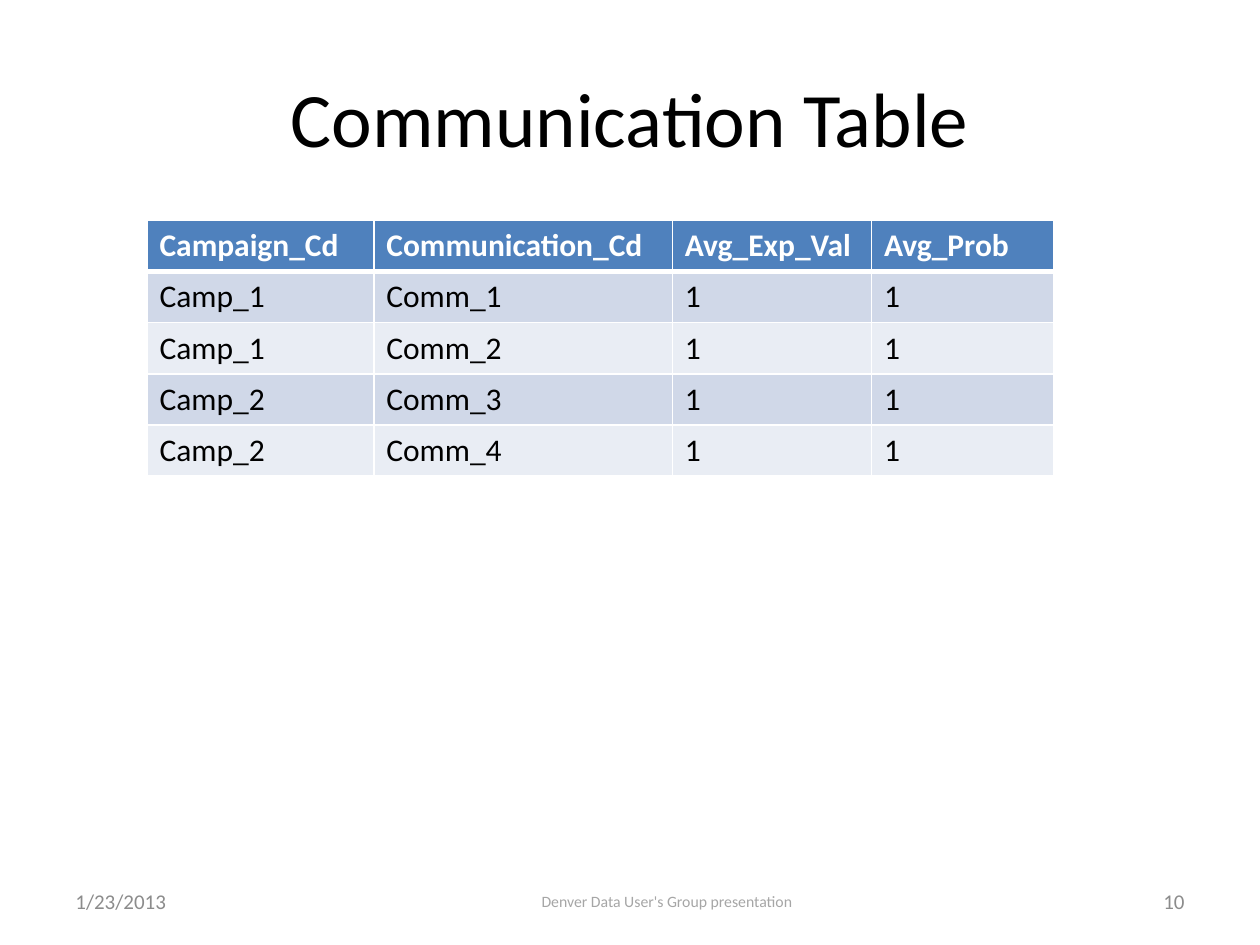
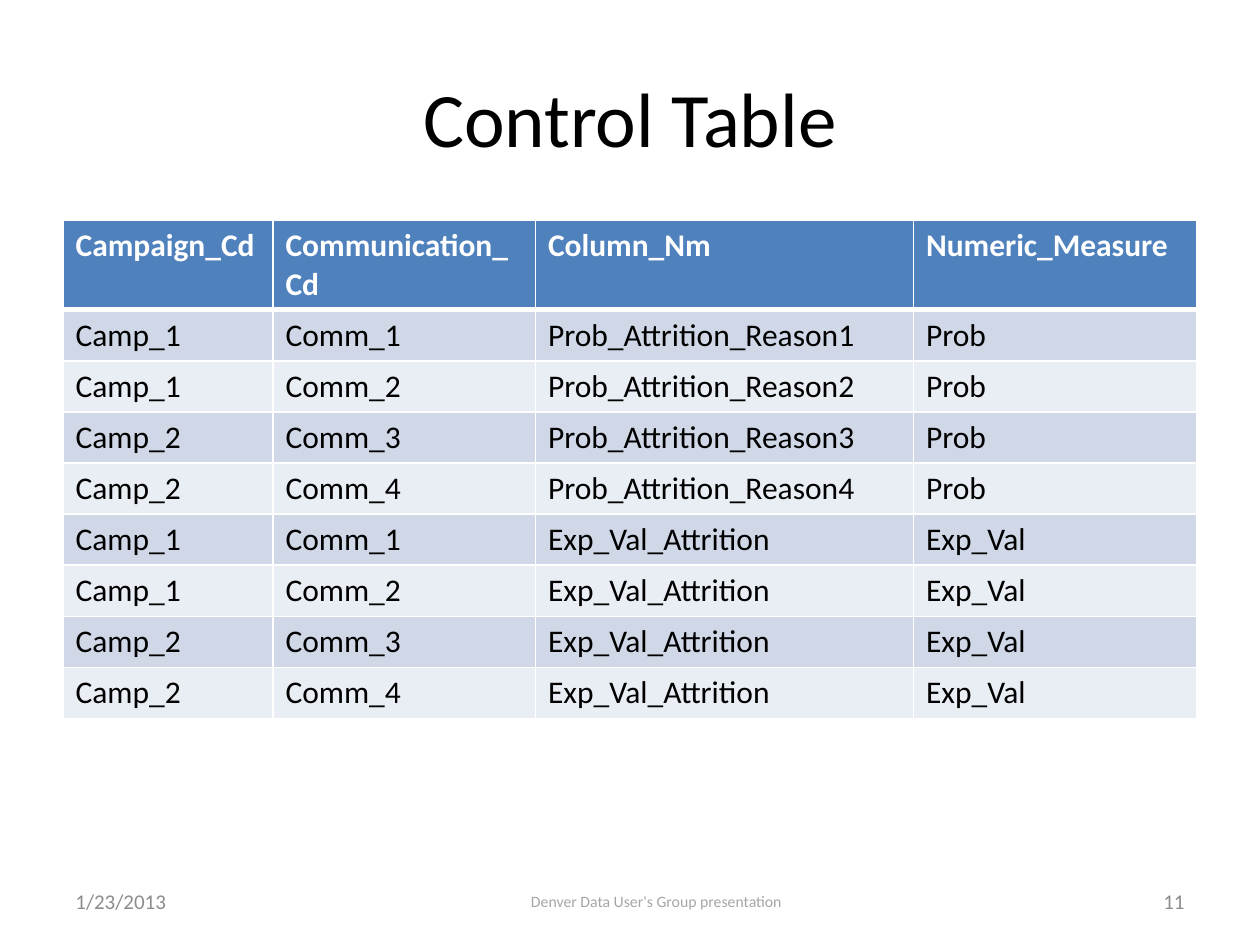
from lxml import etree
from pptx import Presentation
from pptx.dml.color import RGBColor
from pptx.enum.text import MSO_ANCHOR, PP_ALIGN
from pptx.oxml.ns import qn
from pptx.util import Pt

LEFT, CENTER, RIGHT = PP_ALIGN.LEFT, PP_ALIGN.CENTER, PP_ALIGN.RIGHT
MIDDLE = MSO_ANCHOR.MIDDLE

DATE = "1/23/2013"
EVENT = "Denver Data User's Group presentation"

COMMUNICATIONS = [
    ("Camp_1", "Comm_1"),
    ("Camp_1", "Comm_2"),
    ("Camp_2", "Comm_3"),
    ("Camp_2", "Comm_4"),
]

TABLE_SLIDES = [
    {
        "title": "Communication Table",
        "number": "10",
        "header": ("Campaign_Cd", "Communication_Cd", "Avg_Exp_Val", "Avg_Prob"),
        "rows": [pair + ("1", "1") for pair in COMMUNICATIONS],
        "table_left": 84,
        "column_widths": (129.6, 170.6, 113.8, 104.4),
        "header_height": 29.2,
        "event_left": 114,
    },
    {
        "title": "Control Table",
        "number": "11",
        "header": ("Campaign_Cd", "Communication_Cd", "Column_Nm", "Numeric_Measure"),
        "rows": [pair + (f"Prob_Attrition_Reason{reason}", "Prob")
                 for reason, pair in enumerate(COMMUNICATIONS, 1)]
              + [pair + ("Exp_Val_Attrition", "Exp_Val") for pair in COMMUNICATIONS],
        "table_left": 36,
        "column_widths": (120, 150, 216, 162),
        "header_height": 51,
        "event_left": 108,
    },
]

SLIDE_WIDTH, SLIDE_HEIGHT = 720, 540
MARGIN = 36
TABLE_TOP = 126
ROW_HEIGHT = 29.2
FOOTER_TOP, FOOTER_HEIGHT = 500.5, 28.75
SIDE_FOOTER_WIDTH, EVENT_WIDTH = 168, 534
THIN, THICK = 1, 3

FONT = "Calibri"
BLACK = RGBColor(0x00, 0x00, 0x00)
WHITE = RGBColor(0xFF, 0xFF, 0xFF)
HEADER_BLUE = RGBColor(0x4F, 0x81, 0xBD)
BANDS = (RGBColor(0xD0, 0xD8, 0xE8), RGBColor(0xE9, 0xED, 0xF4))
FOOTER_GREY = RGBColor(0x8C, 0x8C, 0x8C)
EVENT_GREY = RGBColor(0xA6, 0xA6, 0xA6)


def write(frame, text, size, color, align=LEFT, bold=False):
    paragraph = frame.paragraphs[0]
    paragraph.alignment = align
    run = paragraph.add_run()
    run.text = text
    run.font.name = FONT
    run.font.size = Pt(size)
    run.font.bold = bold
    run.font.color.rgb = color


def add_label(slide, text, box, size, color, align):
    frame = slide.shapes.add_textbox(*map(Pt, box)).text_frame
    frame.word_wrap = True
    frame.vertical_anchor = MIDDLE
    write(frame, text, size, color, align)


def set_borders(cell, top, bottom):
    """Draw white cell edges; must run before the fill is set."""
    properties = cell._tc.get_or_add_tcPr()
    for edge, width in (("lnL", THIN), ("lnR", THIN), ("lnT", top), ("lnB", bottom)):
        line = etree.SubElement(properties, qn(f"a:{edge}"), w=str(Pt(width)))
        fill = etree.SubElement(line, qn("a:solidFill"))
        etree.SubElement(fill, qn("a:srgbClr"), val=str(WHITE))


def add_banded_table(slide, content):
    lines = [content["header"], *content["rows"]]
    widths = content["column_widths"]
    heights = [content["header_height"]] + [ROW_HEIGHT] * len(content["rows"])
    table = slide.shapes.add_table(
        len(lines), len(widths), Pt(content["table_left"]), Pt(TABLE_TOP),
        Pt(sum(widths)), Pt(sum(heights))).table
    for column, width in zip(table.columns, widths):
        column.width = Pt(width)
    for row, height in zip(table.rows, heights):
        row.height = Pt(height)
    for r, line in enumerate(lines):
        is_header = r == 0
        for c, text in enumerate(line):
            cell = table.cell(r, c)
            set_borders(cell, THICK if r == 1 else THIN, THICK if is_header else THIN)
            cell.fill.solid()
            cell.fill.fore_color.rgb = HEADER_BLUE if is_header else BANDS[(r - 1) % 2]
            write(cell.text_frame, text, 18, WHITE if is_header else BLACK, bold=is_header)


def add_footer(slide, content):
    number_left = SLIDE_WIDTH - MARGIN - SIDE_FOOTER_WIDTH
    for text, left, width, size, color, align in (
        (DATE, MARGIN, SIDE_FOOTER_WIDTH, 12, FOOTER_GREY, LEFT),
        (EVENT, content["event_left"], EVENT_WIDTH, 9, EVENT_GREY, CENTER),
        (content["number"], number_left, SIDE_FOOTER_WIDTH, 12, FOOTER_GREY, RIGHT),
    ):
        add_label(slide, text, (left, FOOTER_TOP, width, FOOTER_HEIGHT), size, color, align)


def main():
    deck = Presentation()
    deck.slide_width, deck.slide_height = Pt(SLIDE_WIDTH), Pt(SLIDE_HEIGHT)
    title_box = (MARGIN, 21.6, SLIDE_WIDTH - 2 * MARGIN, 90)
    for content in TABLE_SLIDES:
        slide = deck.slides.add_slide(deck.slide_layouts[6])
        add_label(slide, content["title"], title_box, 44, BLACK, CENTER)
        add_banded_table(slide, content)
        add_footer(slide, content)
    deck.save("out.pptx")


if __name__ == "__main__":
    main()
